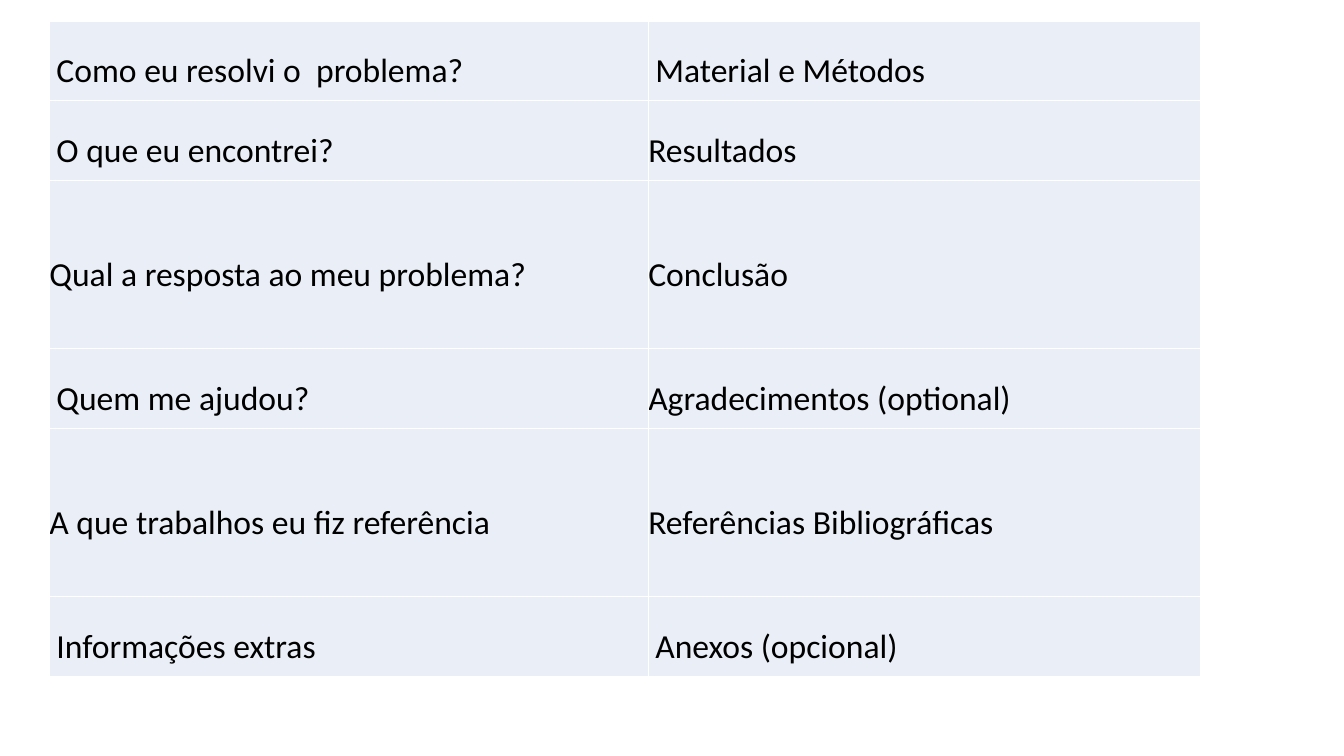
from lxml import etree
from pptx import Presentation
from pptx.dml.color import RGBColor
from pptx.enum.text import MSO_ANCHOR, PP_ALIGN
from pptx.oxml.ns import qn
from pptx.util import Inches, Pt

MIDDLE = MSO_ANCHOR.MIDDLE
JUSTIFY = PP_ALIGN.JUSTIFY

PALE_BLUE = RGBColor(0xEA, 0xEF, 0xF7)
BLACK = RGBColor(0, 0, 0)
WHITE = RGBColor(0xFF, 0xFF, 0xFF)

FONT = "Calibri"
COL_WIDTHS = (5.94, 5.48)
SHORT, TALL = 0.79, 1.67
INDENT = 0.07

ROWS = (
    (SHORT, ("Como eu resolvi o  problema?", INDENT), ("Material e Métodos", INDENT)),
    (SHORT, ("O que eu encontrei?", INDENT), ("Resultados", 0)),
    (TALL, ("Qual a resposta ao meu problema?", 0), ("Conclusão", 0)),
    (SHORT, ("Quem me ajudou?", INDENT), ("Agradecimentos (optional)", 0)),
    (TALL, ("A que trabalhos eu fiz referência", 0), ("Referências Bibliográficas", 0)),
    (SHORT, ("Informações extras", INDENT), ("Anexos (opcional)", INDENT)),
)


def set_borders(cell, color, width):
    tc_pr = cell._tc.get_or_add_tcPr()
    for i, side in enumerate(("a:lnL", "a:lnR", "a:lnT", "a:lnB")):
        ln = etree.Element(qn(side), w=str(width))
        fill = etree.SubElement(ln, qn("a:solidFill"))
        etree.SubElement(fill, qn("a:srgbClr"), val=str(color))
        tc_pr.insert(i, ln)


def fill_cell(cell, text, indent):
    cell.fill.solid()
    cell.fill.fore_color.rgb = PALE_BLUE
    set_borders(cell, WHITE, Pt(1))
    cell.vertical_anchor = MIDDLE
    cell.margin_left = Inches(indent)
    cell.margin_right = cell.margin_top = cell.margin_bottom = 0
    p = cell.text_frame.paragraphs[0]
    p.alignment = JUSTIFY
    p.line_spacing = 1.5
    r = p.add_run()
    r.text = text
    r.font.name = FONT
    r.font.size = Pt(24)
    r.font.color.rgb = BLACK


def add_question_table(s, left, top):
    width = sum(COL_WIDTHS)
    height = sum(row[0] for row in ROWS)
    table = s.shapes.add_table(
        len(ROWS), len(COL_WIDTHS),
        Inches(left), Inches(top), Inches(width), Inches(height),
    ).table
    table.first_row = False
    table.horz_banding = False
    for column, col_width in zip(table.columns, COL_WIDTHS):
        column.width = Inches(col_width)
    for row, (row_height, *entries) in zip(table.rows, ROWS):
        row.height = Inches(row_height)
        for cell, (text, indent) in zip(row.cells, entries):
            fill_cell(cell, text, indent)


def main():
    prs = Presentation()
    prs.slide_width = Inches(13.33)
    prs.slide_height = Inches(7.5)
    s = prs.slides.add_slide(prs.slide_layouts[6])
    add_question_table(s, 0.49, 0.21)
    prs.save("out.pptx")


if __name__ == "__main__":
    main()
